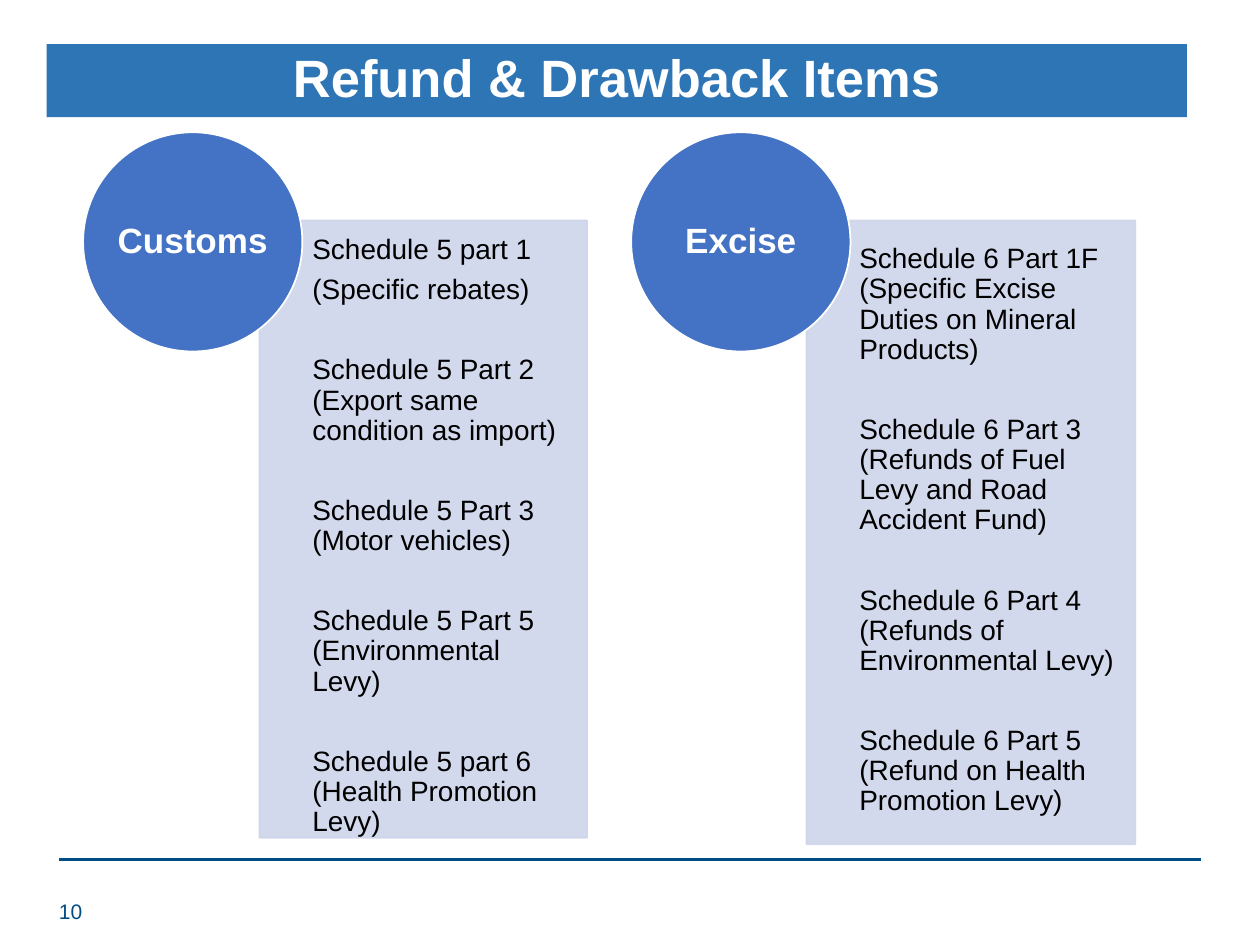
from lxml import etree
from pptx import Presentation
from pptx.dml.color import RGBColor
from pptx.enum.shapes import MSO_CONNECTOR, MSO_SHAPE
from pptx.enum.text import MSO_ANCHOR, PP_ALIGN
from pptx.oxml.ns import qn
from pptx.util import Inches, Pt

RECTANGLE, OVAL = MSO_SHAPE.RECTANGLE, MSO_SHAPE.OVAL
TOP, MIDDLE = MSO_ANCHOR.TOP, MSO_ANCHOR.MIDDLE
LEFT, CENTER = PP_ALIGN.LEFT, PP_ALIGN.CENTER

NAVY = RGBColor(0x00, 0x4C, 0x85)
TITLE_BLUE = RGBColor(0x2E, 0x75, 0xB6)
CIRCLE_BLUE = RGBColor(0x44, 0x72, 0xC4)
PANEL_BLUE = RGBColor(0xCF, 0xD5, 0xEA)
WHITE = RGBColor(0xFF, 0xFF, 0xFF)
BLACK = RGBColor(0x00, 0x00, 0x00)

# Content
TITLE = "Refund & Drawback Items"
PAGE_NUMBER = "10"
GROUPS = [
    {
        "name": "Customs",
        "circle_left": 0.66,
        "panel": (2.06, 1.75, 2.6, 4.9),
        "insets": (0.12, 0.14),  # top, right
        "items": [
            ["Schedule 5 part 1", "(Specific rebates)"],
            ["Schedule 5 Part 2 (Export same condition as import)"],
            ["Schedule 5 Part 3 (Motor vehicles)"],
            ["Schedule 5 Part 5 (Environmental Levy)"],
            ["Schedule 5 part 6 (Health Promotion Levy)"],
        ],
    },
    {
        "name": "Excise",
        "circle_left": 5.01,
        "panel": (6.4, 1.75, 2.61, 4.95),
        "insets": (0.19, 0.12),
        "items": [
            ["Schedule 6 Part 1F (Specific Excise Duties on Mineral Products)"],
            ["Schedule 6 Part 3 (Refunds of Fuel Levy and Road Accident Fund)"],
            ["Schedule 6 Part 4 (Refunds of Environmental Levy)"],
            ["Schedule 6 Part 5 (Refund on Health Promotion Levy)"],
        ],
    },
]
CIRCLE_TOP, CIRCLE_SIZE = 1.05, 1.74
TEXT_INDENT = 0.42
ITEM_GAP, LINE_GAP = Pt(28.5), Pt(5.6)


def set_insets(text_frame, left, top, right, bottom):
    text_frame.margin_left, text_frame.margin_top = Inches(left), Inches(top)
    text_frame.margin_right, text_frame.margin_bottom = Inches(right), Inches(bottom)


def format_paragraph(paragraph, size, color, bold=False, alignment=LEFT, spacing=0.9):
    paragraph.alignment = alignment
    paragraph.line_spacing = spacing
    for run in paragraph.runs:
        run.font.name = "Arial"
        run.font.size = Pt(size)
        run.font.bold = bold
        run.font.color.rgb = color


def add_filled_shape(slide, kind, box, fill, line):
    shape = slide.shapes.add_shape(kind, *map(Inches, box))
    shape.shadow.inherit = False
    shape.fill.solid()
    shape.fill.fore_color.rgb = fill
    shape.line.color.rgb = line
    shape.line.width = Pt(1)
    return shape


def add_panel(slide, group):
    panel = add_filled_shape(slide, RECTANGLE, group["panel"], PANEL_BLUE, PANEL_BLUE)
    for color in panel.element.spPr.iter(qn("a:srgbClr")):
        etree.SubElement(color, qn("a:alpha"), val="90000")

    text_frame = panel.text_frame
    text_frame.word_wrap = True
    text_frame.vertical_anchor = TOP
    top, right = group["insets"]
    set_insets(text_frame, TEXT_INDENT, top, right, 0)

    lines = [(text, LINE_GAP if index else ITEM_GAP)
             for item in group["items"] for index, text in enumerate(item)]
    text_frame.text = "\n".join(text for text, gap in lines)
    for paragraph, (text, gap) in zip(text_frame.paragraphs, lines):
        format_paragraph(paragraph, 16, BLACK)
        paragraph.space_before = gap
    text_frame.paragraphs[0].space_before = Pt(0)


def add_circle(slide, group):
    box = (group["circle_left"], CIRCLE_TOP, CIRCLE_SIZE, CIRCLE_SIZE)
    circle = add_filled_shape(slide, OVAL, box, CIRCLE_BLUE, WHITE)
    text_frame = circle.text_frame
    text_frame.text = group["name"]
    text_frame.vertical_anchor = MIDDLE
    set_insets(text_frame, 0, 0, 0, 0)
    format_paragraph(text_frame.paragraphs[0], 20, WHITE, True, CENTER)


def main():
    presentation = Presentation()
    presentation.slide_width, presentation.slide_height = Inches(10), Inches(7.5)
    slide = presentation.slides.add_slide(presentation.slide_layouts[5])

    # Title band
    title = slide.shapes.title
    title.left, title.top = Inches(0.37), Inches(0.35)
    title.width, title.height = Inches(9.05), Inches(0.58)
    title.fill.solid()
    title.fill.fore_color.rgb = TITLE_BLUE
    title.text_frame.text = TITLE
    title.text_frame.vertical_anchor = MIDDLE
    format_paragraph(title.text_frame.paragraphs[0], 30, WHITE, True, CENTER)

    # Footer rule and page number
    rule = slide.shapes.add_connector(
        MSO_CONNECTOR.STRAIGHT, Inches(0.47), Inches(6.82), Inches(9.53), Inches(6.82))
    rule.line.color.rgb = NAVY
    rule.line.width = Pt(2)
    etree.SubElement(rule.element.spPr, qn("a:effectLst"))

    number = slide.shapes.add_textbox(Inches(0.37), Inches(7.03), Inches(0.46), Inches(0.4))
    number.text_frame.word_wrap = True
    number.text_frame.text = PAGE_NUMBER
    number.text_frame.vertical_anchor = MIDDLE
    format_paragraph(number.text_frame.paragraphs[0], 12, NAVY, spacing=1.0)

    # Each group: a panel of items with a circle over its corner
    for group in GROUPS:
        add_panel(slide, group)
        add_circle(slide, group)

    presentation.save("out.pptx")


if __name__ == "__main__":
    main()
